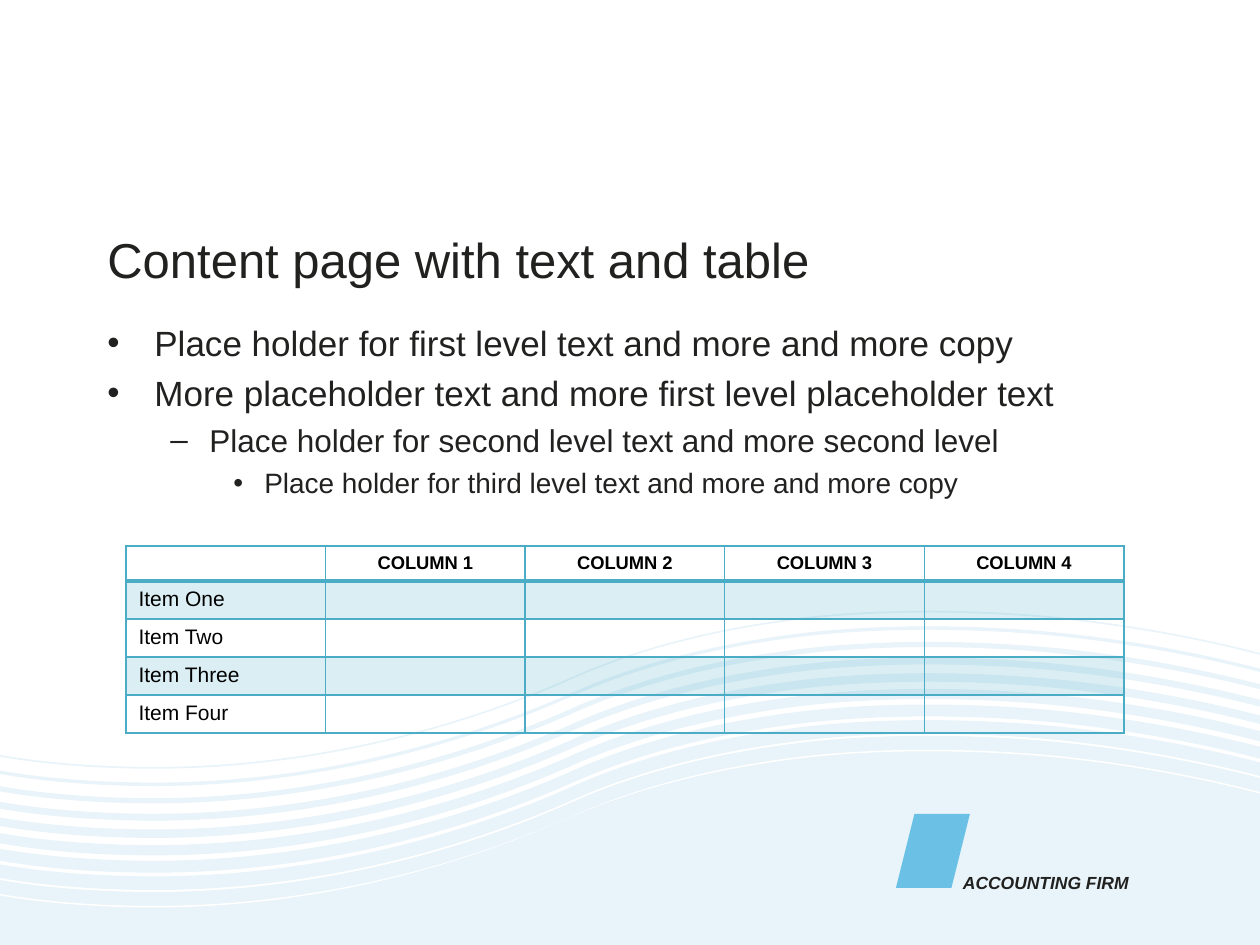
from lxml import etree
from pptx import Presentation
from pptx.dml.color import RGBColor
from pptx.enum.shapes import MSO_SHAPE
from pptx.enum.text import MSO_ANCHOR, PP_ALIGN
from pptx.oxml.ns import qn
from pptx.util import Emu, Pt

PARALLELOGRAM = MSO_SHAPE.PARALLELOGRAM
TOP, MIDDLE = MSO_ANCHOR.TOP, MSO_ANCHOR.MIDDLE
LEFT, CENTER = PP_ALIGN.LEFT, PP_ALIGN.CENTER

WHITE = RGBColor(0xFF, 0xFF, 0xFF)
BLACK = RGBColor(0x00, 0x00, 0x00)
INK = RGBColor(0x21, 0x21, 0x20)
WAVE = RGBColor(0xE9, 0xF4, 0xFA)
TEAL = RGBColor(0x4B, 0xAC, 0xC6)
SKY = RGBColor(0x6B, 0xC1, 0xE5)

FONT = "Arial"
WIDTH, HEIGHT = 1260, 945
SCALE = 914400 / 126

WAVE_BANDS = 9
WAVE_DROP = 125
SLIT_DROP = 139
CREST = [
    (0, 144), (28, 149), (82, 156), (155, 156), (252, 156), (403, 140),
    (568, 68), (641, 35), (724, 15), (816, 5), (888, -2), (966, -2),
    (1047, 5), (1144, 14), (1221, 32), (1260, 42),
]

BULLETS = [
    ("Place holder for first level text and more and more copy", 0),
    ("More placeholder text and more first level placeholder text", 0),
    ("Place holder for second level text and more second level", 1),
    ("Place holder for third level text and more and more copy", 2),
]
LEVELS = [("•", 47, 47, 20, 5), ("–", 102, 39, 18, 4), ("•", 157, 31, 16, 4)]

HEADINGS = ["", "COLUMN 1", "COLUMN 2", "COLUMN 3", "COLUMN 4"]
ITEMS = ["Item One", "Item Two", "Item Three", "Item Four"]
HEADER_HEIGHT, ITEM_HEIGHT = 35, 38


def px(length):
    return Emu(round(length * SCALE))


def set_font(para, size, color=INK, bold=False, italic=False):
    font = para.font
    font.name, font.size, font.color.rgb = FONT, Pt(size), color
    font.bold, font.italic = bold, italic


def add_text_box(page, box, anchor=TOP):
    frame = page.shapes.add_textbox(*map(px, box)).text_frame
    frame.word_wrap = True
    frame.vertical_anchor = anchor
    return frame


def bend(lines):
    for first in range(0, len(lines), 3):
        curve = etree.Element(qn("a:cubicBezTo"))
        lines[first].addprevious(curve)
        for line in lines[first:first + 3]:
            curve.append(line[0])
            line.getparent().remove(line)


def add_ribbon(page, upper, lower, color, curved_back=True):
    corners = [(px(x), px(y)) for x, y in upper + lower[::-1]]
    builder = page.shapes.build_freeform(*corners[0])
    builder.add_line_segments(corners[1:], close=True)
    shape = builder.convert_to_shape()
    lines = list(shape._element.iter(qn("a:lnTo")))
    bend(lines[:len(upper) - 1])
    if curved_back:
        bend(lines[len(upper):len(upper) + len(lower) - 1])
    shape.shadow.inherit = False
    shape.fill.solid()
    shape.fill.fore_color.rgb = color
    shape.line.fill.background()


def add_waves(page, box):
    left, top, width, height = box

    def crest(drop):
        return [(left + x, top + y + drop) for x, y in CREST]

    for band in range(WAVE_BANDS - 1):
        drop = band * WAVE_DROP / (WAVE_BANDS - 1)
        add_ribbon(page, crest(drop), crest(drop + 1.7 * (band + 1)), WAVE)

    floor = [(left, top + height), (left + width, top + height)]
    add_ribbon(page, crest(WAVE_DROP), floor, WAVE, curved_back=False)
    upper, lower = crest(SLIT_DROP), crest(SLIT_DROP + 1.5)
    add_ribbon(page, upper[:7], lower[:6] + upper[6:7], WHITE)
    add_ribbon(page, upper[6:], upper[6:7] + lower[7:], WHITE)


def add_title(page, box):
    para = add_text_box(page, box, MIDDLE).paragraphs[0]
    para.text = "Content page with text and table"
    set_font(para, 28)


def add_bullets(page, box):
    frame = add_text_box(page, box)
    for index, (words, level) in enumerate(BULLETS):
        mark, margin, hanging, size, gap = LEVELS[level]
        para = frame.add_paragraph() if index else frame.paragraphs[0]
        para.text = words
        para.level = level
        if index:
            para.space_before = Pt(gap)
        props = para._p.get_or_add_pPr()
        props.set("marL", str(px(margin)))
        props.set("indent", str(-px(hanging)))
        etree.SubElement(props, qn("a:buFont"), typeface=FONT)
        etree.SubElement(props, qn("a:buChar"), char=mark)
        set_font(para, size)


def set_borders(cell, weights):
    props = cell._tc.get_or_add_tcPr()
    for side, weight in zip("LRTB", weights):
        line = etree.SubElement(props, qn(f"a:ln{side}"), w=str(Pt(weight)))
        fill = etree.SubElement(line, qn("a:solidFill"))
        etree.SubElement(fill, qn("a:srgbClr"), val=str(TEAL))


def fill_cell(cell, shaded):
    if not shaded:
        cell.fill.background()
        return
    cell.fill.solid()
    cell.fill.fore_color.rgb = TEAL
    color = cell._tc.tcPr.find(f"{qn('a:solidFill')}/{qn('a:srgbClr')}")
    etree.SubElement(color, qn("a:alpha"), val="20000")


def add_item_table(page, box):
    rows = [HEADINGS] + [[item] + [""] * (len(HEADINGS) - 1) for item in ITEMS]
    table = page.shapes.add_table(len(rows), len(HEADINGS), *map(px, box)).table
    table.first_row = table.horz_banding = False
    for column in table.columns:
        column.width = px(box[2] / len(HEADINGS))
    for row, words in enumerate(rows):
        header = row == 0
        size = 10.5 if header else 12
        table.rows[row].height = px(HEADER_HEIGHT if header else ITEM_HEIGHT)
        for column, word in enumerate(words):
            cell = table.cell(row, column)
            cell.vertical_anchor = MIDDLE if header else TOP
            para = cell.text_frame.paragraphs[0]
            para.alignment = CENTER if header else LEFT
            set_font(para, size, BLACK, bold=header)
            if word:
                para.add_run().text = word
            else:
                etree.SubElement(para._p, qn("a:endParaRPr"), sz=str(int(size * 100)))
            set_borders(cell, (1, 1, 2 if row == 1 else 1, 2 if header else 1))
            fill_cell(cell, row % 2 == 1)


def add_signature(page, box):
    left, top, width, height = box
    mark = page.shapes.add_shape(PARALLELOGRAM, px(left), px(top), px(height), px(height))
    mark.shadow.inherit = False
    mark.fill.solid()
    mark.fill.fore_color.rgb = SKY
    mark.line.fill.background()
    frame = add_text_box(page, (left + 62, top + 53, width - 62, 37))
    frame.margin_left = frame.margin_right = px(5)
    frame.margin_top = frame.margin_bottom = px(5)
    frame.word_wrap = False
    para = frame.paragraphs[0]
    para.text = "ACCOUNTING FIRM"
    set_font(para, 10, bold=True, italic=True)


def main():
    deck = Presentation()
    deck.slide_width, deck.slide_height = px(WIDTH), px(HEIGHT)
    page = deck.slides.add_slide(deck.slide_layouts[6])
    page.background.fill.solid()
    page.background.fill.fore_color.rgb = WHITE
    add_waves(page, (0, 611, WIDTH, HEIGHT - 611))
    add_bullets(page, (95, 315, 1065, 575))
    add_title(page, (95, 220, 1065, 78))
    add_item_table(page, (126, 546, 998, HEADER_HEIGHT + ITEM_HEIGHT * len(ITEMS)))
    add_signature(page, (896, 814, 264, 74))
    deck.save("out.pptx")


if __name__ == "__main__":
    main()
